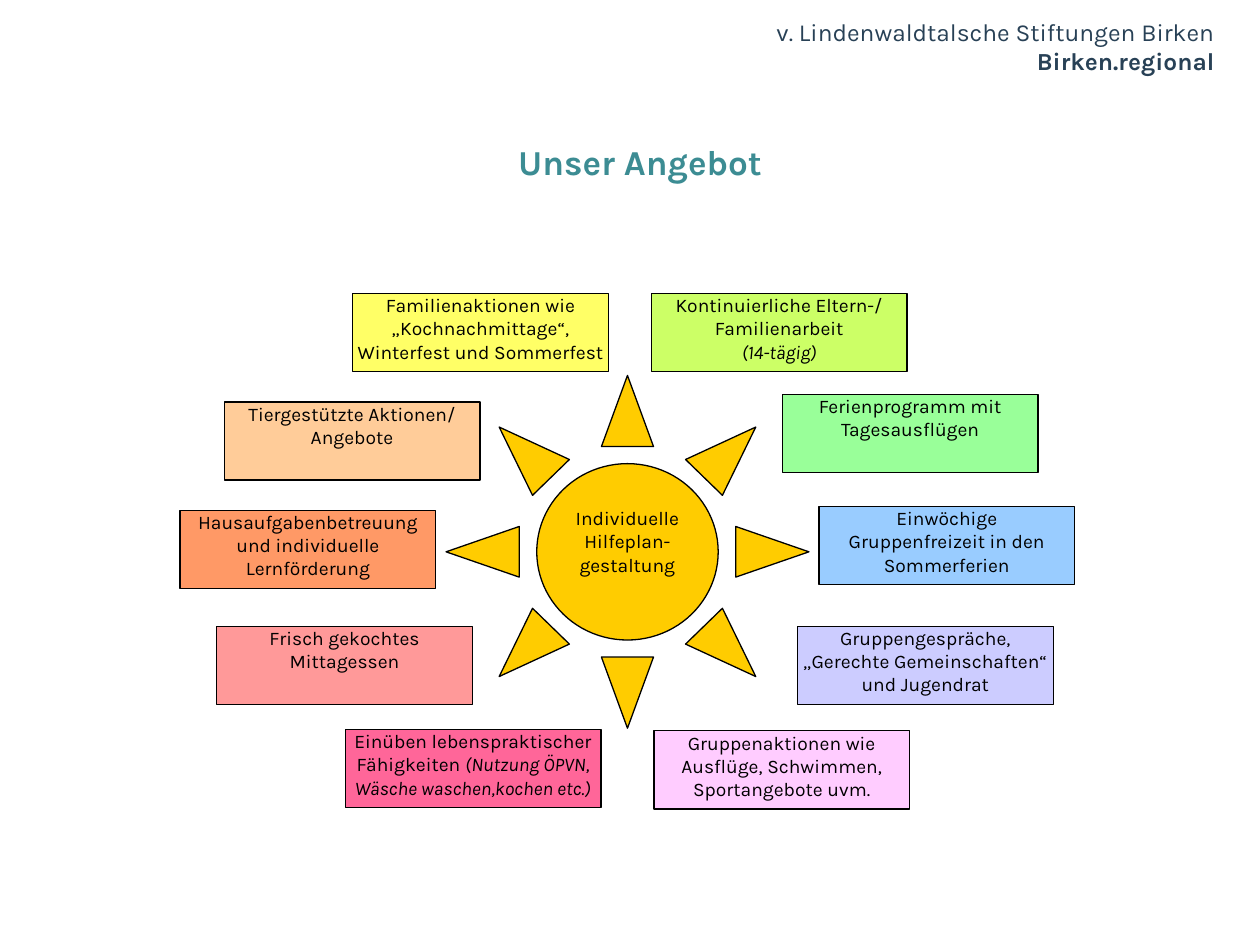
from dataclasses import dataclass
from typing import NamedTuple

from pptx import Presentation
from pptx.dml.color import RGBColor
from pptx.enum.shapes import MSO_SHAPE
from pptx.enum.text import MSO_ANCHOR, PP_ALIGN
from pptx.util import Inches, Pt


@dataclass(frozen=True)
class Theme:
    font: str = "Karla"
    header: str = "284156"
    title: str = "3C8C93"
    ink: str = "000000"
    sun: str = "FFCC00"
    header_size: int = 14
    title_size: int = 20
    body_size: int = 11
    outline: float = 0.75


class Box(NamedTuple):
    """Left, top, width and height in grid units of a tenth of an inch."""
    column: float
    row: float
    columns: float
    rows: float

    def lengths(self) -> list[int]:
        return [Inches(value * GRID) for value in self]


class Run(NamedTuple):
    text: str
    italic: bool = False
    bold: bool = False


class Card(NamedTuple):
    column: float
    row: float
    fill: str
    lines: list


THEME = Theme()
GRID = 0.1
CARD_COLUMNS, CARD_ROWS = 20.3, 6.2

# Offers around the sun, clockwise from the top right
CARDS = [
    Card(51.7, 23.3, "CCFF66", ["Kontinuierliche Eltern-/", "Familienarbeit",
                                [Run("(14-tägig)", italic=True)]]),
    Card(62.1, 31.3, "99FF99", ["Ferienprogramm mit", "Tagesausflügen"]),
    Card(65.0, 40.2, "99CCFF", ["Einwöchige", "Gruppenfreizeit in den", "Sommerferien"]),
    Card(63.3, 49.7, "CCCCFF", ["Gruppengespräche,",
                                "„Gerechte Gemeinschaften“ und Jugendrat"]),
    Card(51.9, 58.0, "FFCCFF", ["Gruppenaktionen wie", "Ausflüge, Schwimmen,",
                                "Sportangebote uvm."]),
    Card(27.4, 57.9, "FF6699", ["Einüben lebenspraktischer",
                                [Run("Fähigkeiten "),
                                 Run("(Nutzung ÖPVN, Wäsche waschen,kochen etc.)", italic=True)]]),
    Card(17.2, 49.7, "FF9999", ["Frisch gekochtes", "Mittagessen"]),
    Card(14.3, 40.5, "FF9966", ["Hausaufgabenbetreuung und individuelle", "Lernförderung"]),
    Card(17.8, 31.9, "FFCC99", ["Tiergestützte Aktionen/", "Angebote"]),
    Card(28.0, 23.3, "FFFF66", ["Familienaktionen wie", "„Kochnachmittage“,",
                                "Winterfest und Sommerfest"]),
]


def write_text(shape, lines: list, size: int, color: str,
               align=PP_ALIGN.CENTER, anchor=MSO_ANCHOR.TOP) -> None:
    """Write one paragraph per line; a line is a string or a list of runs."""
    frame = shape.text_frame
    frame.word_wrap = True
    frame.vertical_anchor = anchor
    frame.margin_left = frame.margin_top = frame.margin_right = frame.margin_bottom = 0
    for index, line in enumerate(lines):
        paragraph = frame.add_paragraph() if index else frame.paragraphs[0]
        paragraph.alignment = align
        paragraph.font.name = THEME.font
        paragraph.font.size = Pt(size)
        paragraph.font.color.rgb = RGBColor.from_string(color)
        for part in [Run(line)] if isinstance(line, str) else line:
            run = paragraph.add_run()
            run.text = part.text
            run.font.bold = part.bold
            run.font.italic = part.italic


def add_filled(slide, kind: MSO_SHAPE, box: Box, fill: str, outlined: bool = True):
    shape = slide.shapes.add_shape(kind, *box.lengths())
    shape.shadow.inherit = False
    shape.fill.solid()
    shape.fill.fore_color.rgb = RGBColor.from_string(fill)
    if outlined:
        shape.line.color.rgb = RGBColor.from_string(THEME.ink)
        shape.line.width = Pt(THEME.outline)
    else:
        shape.line.fill.background()
    return shape


def add_card(slide, card: Card) -> None:
    box = Box(card.column, card.row, CARD_COLUMNS, CARD_ROWS)
    shape = add_filled(slide, MSO_SHAPE.RECTANGLE, box, card.fill)
    write_text(shape, card.lines, THEME.body_size, THEME.ink)


def main() -> None:
    presentation = Presentation()
    presentation.slide_width, presentation.slide_height = Inches(10), Inches(7.5)
    slide = presentation.slides.add_slide(presentation.slide_layouts[5])

    # Title
    title = slide.shapes.title
    title.left, title.top, title.width, title.height = Box(8.3, 9.6, 85, 6.5).lengths()
    write_text(title, [[Run("Unser Angebot", bold=True)]], THEME.title_size, THEME.title,
               anchor=MSO_ANCHOR.MIDDLE)

    # Organisation header
    header = slide.shapes.add_textbox(*Box(41.3, 1, 55.1, 5).lengths())
    write_text(header, ["v. Lindenwaldtalsche Stiftungen Birken",
                        [Run("Birken.regional", bold=True)]],
               THEME.header_size, THEME.header, PP_ALIGN.RIGHT, MSO_ANCHOR.BOTTOM)

    # Sun with its label, and the cards around it
    add_filled(slide, MSO_SHAPE.SUN, Box(35.4, 29.8, 28.8, 28), THEME.sun)
    for card in CARDS:
        add_card(slide, card)
    label = add_filled(slide, MSO_SHAPE.RECTANGLE, Box(45.1, 40.2, 9.4, 7.9), THEME.sun,
                       outlined=False)
    write_text(label, ["Individuelle", "Hilfeplan-", "gestaltung"], THEME.body_size, THEME.ink)

    presentation.save("out.pptx")


if __name__ == "__main__":
    main()
